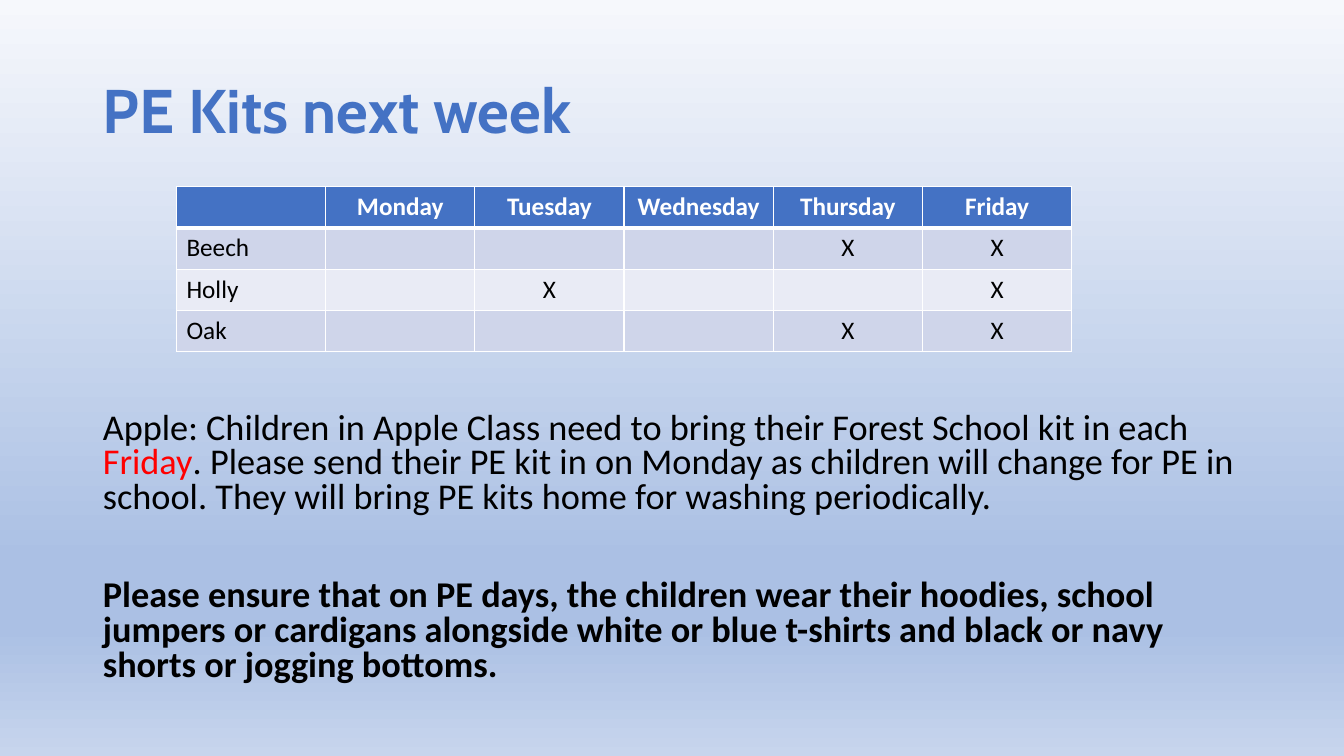
"""Build the PE kits slide: title, weekly timetable and kit notes."""
from lxml import etree
from pptx import Presentation
from pptx.dml.color import RGBColor
from pptx.enum.text import MSO_ANCHOR, MSO_AUTO_SIZE, PP_ALIGN
from pptx.oxml.ns import qn
from pptx.util import Inches, Pt

LEFT, CENTER = PP_ALIGN.LEFT, PP_ALIGN.CENTER
TOP, MIDDLE = MSO_ANCHOR.TOP, MSO_ANCHOR.MIDDLE
NO_FIT = MSO_AUTO_SIZE.NONE

BLUE, RED, BLACK, WHITE = "4472C4", "FF0000", "000000", "FFFFFF"
BANDS = ["CFD5EA", "E9EBF5"]
BACKGROUND = [(0, "F6F8FC"), (74, "ABC0E4"), (83, "ABC0E4"), (100, "C7D5ED")]

TITLE = "PE Kits next week"
DAYS = ["Monday", "Tuesday", "Wednesday", "Thursday", "Friday"]
PE_DAYS = {
    "Beech": ["Thursday", "Friday"],
    "Holly": ["Tuesday", "Friday"],
    "Oak": ["Thursday", "Friday"],
}
APPLE_NOTE = [
    ("Apple: Children in Apple Class need to bring their Forest School kit in each ", BLACK),
    ("Friday", RED),
    (". Please send their PE kit in on Monday as children will change for PE in school. "
     "They will bring PE kits home for washing periodically.", BLACK),
]
CLOTHING_NOTE = (
    "Please ensure that on PE days, the children wear their hoodies, school jumpers or "
    "cardigans alongside white or blue t-shirts and black or navy shorts or jogging bottoms."
)

MARGIN, TEXT_W = 0.92, 11.5
COL_W, ROW_H = 1.48, 0.41
NOTE_SIZE = 25.9


def rgb(color):
    return RGBColor.from_string(color)


def add_text(p, text, size=18, font="Calibri", color=BLACK, bold=False, align=LEFT):
    p.alignment = align
    r = p.add_run()
    r.text = text
    r.font.size = Pt(size)
    r.font.name = font
    r.font.bold = bold
    r.font.color.rgb = rgb(color)


def place(sp, top, height, anchor):
    sp.left, sp.top = Inches(MARGIN), Inches(top)
    sp.width, sp.height = Inches(TEXT_W), Inches(height)
    tf = sp.text_frame
    tf.word_wrap = True
    tf.auto_size = NO_FIT
    tf.vertical_anchor = anchor
    return tf


def set_background(s):
    fill = s.background.fill
    fill.gradient()
    fill.gradient_angle = 270
    stops = s.element.find(".//" + qn("a:gsLst"))
    stops.clear()
    for pos, color in BACKGROUND:
        stop = etree.SubElement(stops, qn("a:gs"), pos=str(pos * 1000))
        etree.SubElement(stop, qn("a:srgbClr"), val=color)


def add_borders(cell, bottom, top):
    tc_pr = cell._tc.get_or_add_tcPr()
    for side, width in (("L", 1), ("R", 1), ("T", top), ("B", bottom)):
        ln = etree.SubElement(tc_pr, qn("a:ln" + side), w=str(Pt(width)))
        solid = etree.SubElement(ln, qn("a:solidFill"))
        etree.SubElement(solid, qn("a:srgbClr"), val=WHITE)


def add_timetable(s):
    rows = [[""] + DAYS]
    for name, pe_days in PE_DAYS.items():
        rows.append([name] + ["X" if day in pe_days else "" for day in DAYS])
    n_rows, n_cols = len(rows), len(rows[0])
    table = s.shapes.add_table(n_rows, n_cols, Inches(1.75), Inches(1.85),
                               Inches(COL_W * n_cols), Inches(ROW_H * n_rows)).table
    for i, row in enumerate(rows):
        header = i == 0
        for j, text in enumerate(row):
            cell = table.cell(i, j)
            add_borders(cell, bottom=3 if header else 1, top=3 if i == 1 else 1)
            cell.fill.solid()
            cell.fill.fore_color.rgb = rgb(BLUE if header else BANDS[(i - 1) % 2])
            if text:
                add_text(cell.text_frame.paragraphs[0], text, bold=header,
                         color=WHITE if header else BLACK, align=CENTER if j else LEFT)


def start_note(p, space_before):
    p.line_spacing = 0.8
    p.space_before = Pt(space_before)
    p_pr = p._p.get_or_add_pPr()
    p_pr.set("marL", "0")
    p_pr.set("indent", "0")
    etree.SubElement(p_pr, qn("a:buNone"))


def main():
    prs = Presentation()
    prs.slide_width, prs.slide_height = Inches(13.33), Inches(7.5)
    s = prs.slides.add_slide(prs.slide_layouts[1])
    set_background(s)

    p = place(s.shapes.title, 0.4, 1.45, MIDDLE).paragraphs[0]
    p.line_spacing = 0.9
    add_text(p, TITLE, size=44, font="Cabin", color=BLUE, bold=True)

    add_timetable(s)

    tf = place(s.placeholders[1], 4.04, 2.72, TOP)
    p = tf.paragraphs[0]
    start_note(p, 0)
    for text, color in APPLE_NOTE:
        add_text(p, text, size=NOTE_SIZE, color=color)
    p = tf.add_paragraph()
    start_note(p, 45)
    add_text(p, CLOTHING_NOTE, size=NOTE_SIZE, bold=True)

    prs.save("out.pptx")


if __name__ == "__main__":
    main()
